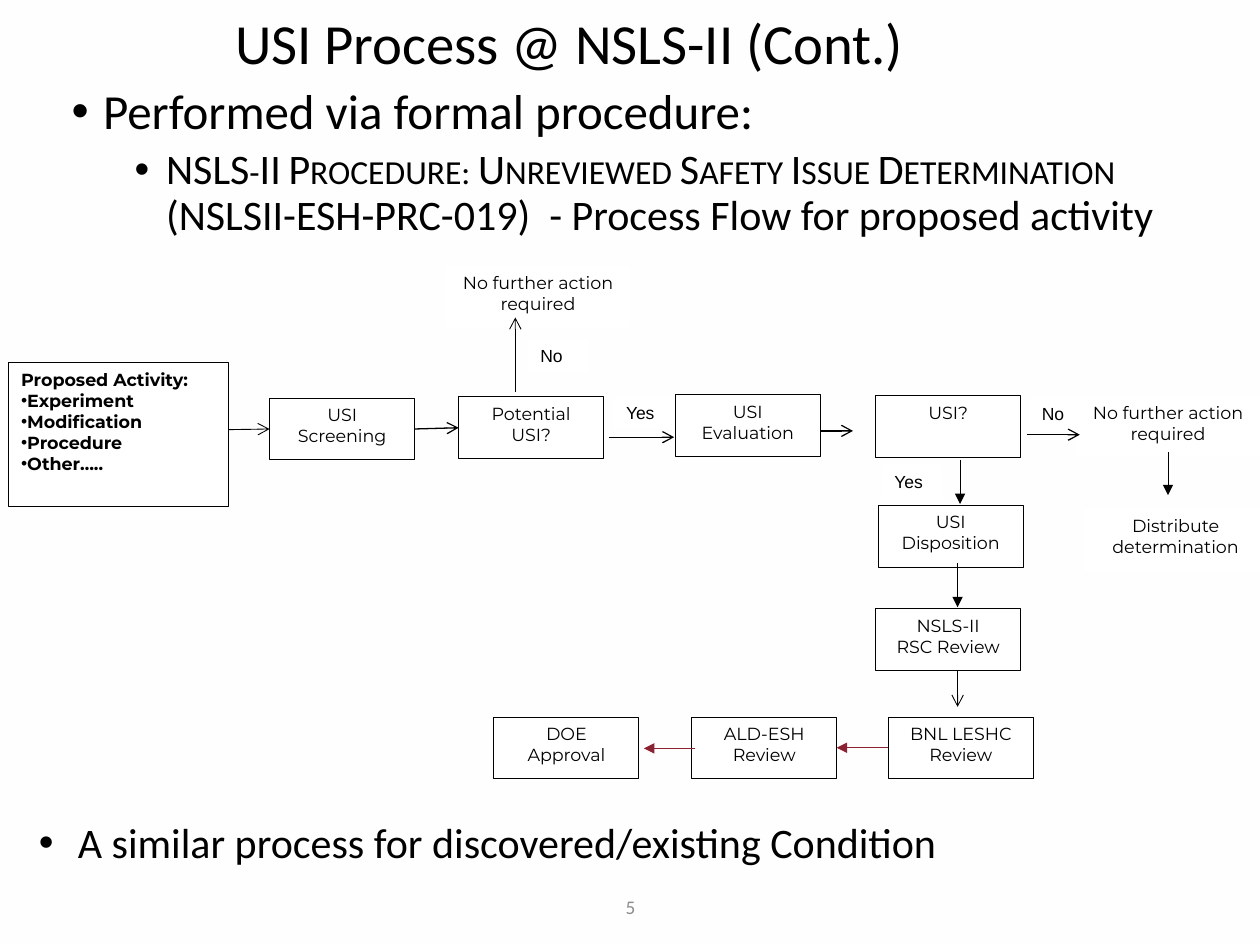
from dataclasses import dataclass

from lxml.etree import SubElement
from pptx import Presentation
from pptx.dml.color import RGBColor
from pptx.enum.shapes import MSO_CONNECTOR, MSO_SHAPE
from pptx.enum.text import MSO_ANCHOR, PP_ALIGN
from pptx.oxml.ns import qn
from pptx.util import Inches, Pt


@dataclass(frozen=True)
class Theme:
    ink: str = "000000"
    paper: str = "FFFFFF"
    background: str = "FFFEFE"
    muted: str = "8C8C8C"
    accent: str = "8B2232"
    text_font: str = "Calibri"
    step_font: str = "Montserrat"
    branch_font: str = "Arial"
    title_size: float = 32.4
    lead_size: float = 28
    point_size: float = 24
    step_size: float = 10
    number_size: float = 11
    thin: float = 0.5
    medium: float = 0.75


class FlowSlide:
    COLUMNS, ROWS = 100, 75
    STEP_WIDTH, STEP_HEIGHT = 11.5, 4.9

    def __init__(self, deck, theme):
        self.theme = theme
        self.column = deck.slide_width / self.COLUMNS
        self.row = deck.slide_height / self.ROWS
        self.slide = deck.slides.add_slide(deck.slide_layouts[6])
        self.slide.background.fill.solid()
        self.slide.background.fill.fore_color.rgb = RGBColor.from_string(theme.background)

    def place(self, column, row):
        return round(column * self.column), round(row * self.row)

    def run(self, paragraph, text, font, size, color=None, bold=False, small_caps=False):
        run = paragraph.add_run()
        run.text = text
        run.font.name, run.font.size, run.font.bold = font, Pt(size), bold
        run.font.color.rgb = RGBColor.from_string(color or self.theme.ink)
        if small_caps:
            run.font._element.set("cap", "small")

    def bullet(self, paragraph, margin=0.0, hanging=0.0):
        properties = paragraph._p.get_or_add_pPr()
        properties.set("marL", str(Inches(margin)))
        properties.set("indent", str(-Inches(hanging)))
        SubElement(properties, qn("a:buFont")).set("typeface", "Arial")
        SubElement(properties, qn("a:buChar")).set("char", "•")

    def text(self, column, row, width, height, anchor=MSO_ANCHOR.TOP):
        frame = self.slide.shapes.add_textbox(
            *self.place(column, row), *self.place(width, height)).text_frame
        frame.word_wrap = True
        frame.vertical_anchor = anchor
        return frame

    def box(self, column, row, lines, width=STEP_WIDTH, height=STEP_HEIGHT, outlined=True,
            font=None, align=PP_ALIGN.CENTER, bold=False, bullets=False):
        shape = self.slide.shapes.add_shape(
            MSO_SHAPE.RECTANGLE, *self.place(column, row), *self.place(width, height))
        shape.shadow.inherit = False
        shape.fill.solid()
        shape.fill.fore_color.rgb = RGBColor.from_string(self.theme.paper)
        if outlined:
            shape.line.color.rgb = RGBColor.from_string(self.theme.ink)
            shape.line.width = Pt(self.theme.thin)
        else:
            shape.line.fill.background()
        frame = shape.text_frame
        frame.word_wrap = True
        frame.vertical_anchor = MSO_ANCHOR.TOP
        for index, line in enumerate(lines):
            paragraph = frame.add_paragraph() if index else frame.paragraphs[0]
            if bullets and index:
                self.bullet(paragraph)
            paragraph.alignment = align
            self.run(paragraph, line, font or self.theme.step_font,
                     self.theme.step_size, bold=bold)
        return shape

    def outcome(self, column, row, text):
        return self.box(column, row, [text], width=14.6, outlined=False)

    def branch(self, column, row, text):
        return self.box(column, row, [text], width=4.8, height=2.7, outlined=False,
                        font=self.theme.branch_font, align=PP_ALIGN.LEFT)

    def arrow(self, start, end, head="arrow", width=None, color=None, source=None, target=None):
        connector = self.slide.shapes.add_connector(
            MSO_CONNECTOR.STRAIGHT, *self.place(*start), *self.place(*end))
        if source:
            connector.begin_connect(*source)
        if target:
            connector.end_connect(*target)
        connector.line.color.rgb = RGBColor.from_string(color or self.theme.ink)
        connector.line.width = Pt(width or self.theme.thin)
        SubElement(connector.line._get_or_add_ln(), qn("a:tailEnd")).set("type", head)
        SubElement(connector._element.spPr, qn("a:effectLst"))


def add_copy(page, theme):
    title = page.text(2.1, 0.6, 86.2, 6.1, MSO_ANCHOR.MIDDLE).paragraphs[0]
    title.alignment = PP_ALIGN.CENTER
    title.line_spacing = 0.9
    page.run(title, "USI Process @ NSLS-II (Cont.)", theme.text_font, theme.title_size)

    body = page.text(4.7, 6.4, 88.9, 13.5)
    lead = body.paragraphs[0]
    page.bullet(lead, 0.25, 0.25)
    lead.line_spacing = 0.9
    page.run(lead, "Performed via formal procedure:", theme.text_font, theme.lead_size)
    procedure = body.add_paragraph()
    procedure.level = 1
    page.bullet(procedure, 0.75, 0.25)
    procedure.line_spacing = 0.9
    procedure.space_before = Pt(5)
    page.run(procedure, "NSLS-II Procedure: Unreviewed Safety Issue Determination",
             theme.text_font, theme.point_size, small_caps=True)
    page.run(procedure, " (NSLSII-ESH-PRC-019)  - Process Flow for proposed activity",
             theme.text_font, theme.point_size)

    closing = page.text(2.1, 64.3, 90.6, 5).paragraphs[0]
    page.bullet(closing, 0.31, 0.31)
    page.run(closing, "A similar process for discovered/existing Condition",
             theme.text_font, theme.point_size)

    number = page.text(47.7, 69, 4.7, 6, MSO_ANCHOR.MIDDLE).paragraphs[0]
    number.alignment = PP_ALIGN.CENTER
    page.run(number, "5", theme.text_font, theme.number_size, theme.muted)


def add_flow(page, theme):
    page.box(0.7, 28.8, ["Proposed Activity:", "Experiment", "Modification", "Procedure", "Other….."],
             width=17.4, height=11.4, align=PP_ALIGN.JUSTIFY, bold=True, bullets=True)
    screening = page.box(21.4, 31.6, ["USI", "Screening"])
    potential = page.box(36.4, 31.5, ["Potential", "USI?"])
    page.box(53.6, 31.3, ["USI", "Evaluation"])
    page.box(69.5, 31.4, ["USI?"])
    page.box(69.7, 40.1, ["USI", "Disposition"])
    page.box(69.5, 48.3, ["NSLS-II", "RSC Review"])
    laboratory = page.box(70.5, 56.9, ["BNL LESHC", "Review"])
    directorate = page.box(54.9, 56.9, ["ALD-ESH", "Review"])
    page.box(39.2, 56.9, ["DOE", "Approval"])

    for column, row, result in (
        (35.4, 21.1, "No further action required"),
        (85.4, 31.4, "No further action required"),
        (86, 40.4, "Distribute determination"),
    ):
        page.outcome(column, row, result)
    for column, row, answer in (
        (41.9, 26.9, "No"), (48.7, 31.4, "Yes"), (81.7, 31.5, "No"), (70, 36.9, "Yes"),
    ):
        page.branch(column, row, answer)

    page.arrow((18.1, 34.1), (21.4, 34.1), target=(screening, 1))
    page.arrow((32.9, 34.1), (36.4, 34), width=theme.medium,
               source=(screening, 3), target=(potential, 1))
    page.arrow((40.9, 31.1), (40.9, 25.2))
    page.arrow((76, 53.2), (76, 56.1))
    for start, end, row in ((48.3, 53.5, 34.7), (65.2, 67.7, 34.2), (81.5, 85.7, 34.5)):
        page.arrow((start, row), (end, row), width=theme.medium)
    for column, start, end in ((76.2, 36.5, 40), (76, 44.7, 48.2), (92.7, 35.9, 39.3)):
        page.arrow((column, start), (column, end), head="triangle")
    page.arrow((70.5, 59.4), (66.4, 59.4), head="triangle", color=theme.accent,
               source=(laboratory, 1), target=(directorate, 3))
    page.arrow((55.2, 59.4), (51.1, 59.4), head="triangle", color=theme.accent)


def main():
    deck = Presentation()
    deck.slide_width, deck.slide_height = Inches(10), Inches(7.5)
    theme = Theme()
    page = FlowSlide(deck, theme)
    add_copy(page, theme)
    add_flow(page, theme)
    deck.save("out.pptx")


if __name__ == "__main__":
    main()
